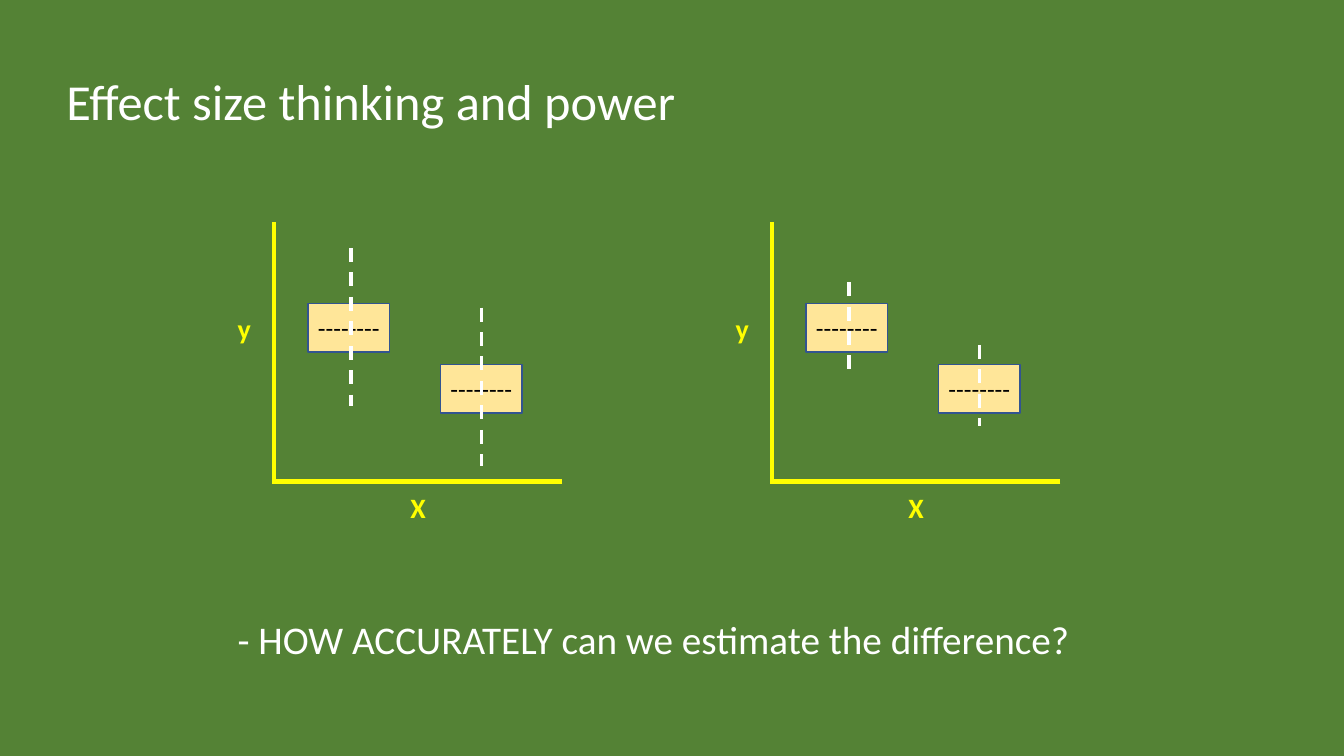
"""Build a slide comparing wide and narrow estimates of the same group difference."""
from dataclasses import dataclass

from lxml.etree import SubElement
from pptx import Presentation
from pptx.dml.color import RGBColor
from pptx.enum.dml import MSO_LINE
from pptx.enum.shapes import MSO_CONNECTOR, MSO_SHAPE
from pptx.enum.text import MSO_ANCHOR, MSO_AUTO_SIZE, PP_ALIGN
from pptx.oxml.ns import qn
from pptx.util import Cm, Pt


@dataclass(frozen=True)
class Theme:
    font: str = "Calibri"
    background: RGBColor = RGBColor(0x54, 0x82, 0x35)
    text: RGBColor = RGBColor(0xFF, 0xFF, 0xFF)
    axis: RGBColor = RGBColor(0xFF, 0xFF, 0x00)
    box: RGBColor = RGBColor(0xFF, 0xE6, 0x99)
    box_line: RGBColor = RGBColor(0x32, 0x54, 0x91)
    median: RGBColor = RGBColor(0x00, 0x00, 0x00)
    title_size: Pt = Pt(36)
    caption_size: Pt = Pt(28)
    label_size: Pt = Pt(20)
    median_size: Pt = Pt(18)
    axis_width: Pt = Pt(3.25)
    whisker_width: Pt = Pt(2.5)
    box_width: Pt = Pt(1)


theme = Theme()
presentation = Presentation()
presentation.slide_width, presentation.slide_height = Cm(33.87), Cm(19.05)
slide = presentation.slides.add_slide(presentation.slide_layouts[5])
slide.background.fill.solid()
slide.background.fill.fore_color.rgb = theme.background


def write(shape, text, size, color, bold=False, align=PP_ALIGN.LEFT):
    """Put one formatted paragraph in a shape."""
    shape.text_frame.text = text
    paragraph = shape.text_frame.paragraphs[0]
    paragraph.alignment = align
    paragraph.font.name = theme.font
    paragraph.font.size = size
    paragraph.font.bold = bold
    paragraph.font.color.rgb = color


def add_line(start, end, color, width):
    """Draw a straight line between two points given in centimetres."""
    points = [Cm(value) for value in (*start, *end)]
    connector = slide.shapes.add_connector(MSO_CONNECTOR.STRAIGHT, *points)
    connector.line.color.rgb = color
    connector.line.width = width
    SubElement(connector._element.spPr, qn("a:effectLst"))
    return connector


title = slide.shapes.title
title.left, title.top, title.width, title.height = Cm(1.42), Cm(1.65), Cm(27.2), Cm(1.8)
title.text_frame.vertical_anchor = MSO_ANCHOR.TOP
title.text_frame.auto_size = MSO_AUTO_SIZE.SHAPE_TO_FIT_TEXT
write(title, "Effect size thinking and power", theme.title_size, theme.text)

first_axis, panel_pitch = 6.91, 12.55
axis_top, axis_bottom, axis_length = 5.59, 12.14, 7.26
boxes = [(0.85, 7.65), (4.19, 9.19)]
whisker_offsets = [1.93, 5.23]
whisker_spans = [
    [(6.25, 10.24), (7.75, 11.73)],
    [(7.11, 9.3), (8.69, 10.74)],
]
texts = [
    ("- HOW ACCURATELY can we estimate the difference?",
     5.74, 15.39, 21.95, 1.45, theme.caption_size, theme.text, False),
]

for panel, spans in enumerate(whisker_spans):
    axis = first_axis + panel * panel_pitch
    add_line((axis, axis_top), (axis, axis_bottom + 0.05), theme.axis, theme.axis_width)
    add_line((axis + axis_length, axis_bottom), (axis, axis_bottom), theme.axis, theme.axis_width)
    texts += [
        ("X", axis + 3.18, 12.24, 0.91, 1.12, theme.label_size, theme.axis, True),
        ("y", axis - 1.17, 7.72, 0.86, 1.12, theme.label_size, theme.axis, True),
    ]
    for (offset, top), whisker_offset, (low, high) in zip(boxes, whisker_offsets, spans):
        box = slide.shapes.add_shape(
            MSO_SHAPE.RECTANGLE, Cm(axis + offset), Cm(top), Cm(2.06), Cm(1.22))
        box.shadow.inherit = False
        box.fill.solid()
        box.fill.fore_color.rgb = theme.box
        box.line.color.rgb = theme.box_line
        box.line.width = theme.box_width
        box.text_frame.vertical_anchor = MSO_ANCHOR.MIDDLE
        write(box, "--------", theme.median_size, theme.median, align=PP_ALIGN.CENTER)
        whisker_x = axis + whisker_offset
        whisker = add_line((whisker_x, low), (whisker_x, high), theme.text, theme.whisker_width)
        whisker.line.dash_style = MSO_LINE.DASH

for text, left, top, width, height, size, color, bold in texts:
    label = slide.shapes.add_textbox(Cm(left), Cm(top), Cm(width), Cm(height))
    label.text_frame.word_wrap = False
    label.text_frame.auto_size = MSO_AUTO_SIZE.SHAPE_TO_FIT_TEXT
    write(label, text, size, color, bold)

presentation.save("out.pptx")
